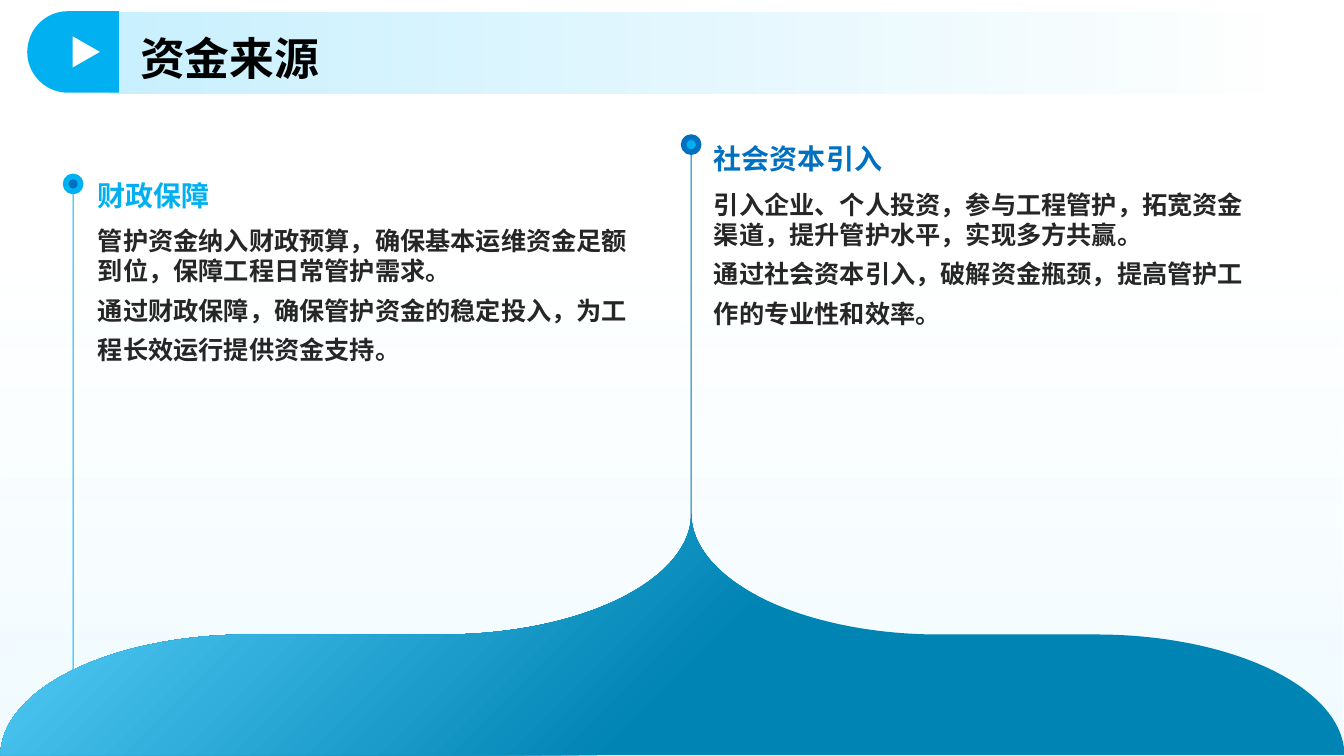
from lxml.etree import SubElement
from pptx import Presentation
from pptx.dml.color import RGBColor
from pptx.enum.shapes import MSO_SHAPE as Preset
from pptx.enum.text import MSO_ANCHOR as Anchor
from pptx.oxml.ns import qn
from pptx.util import Inches, Pt


def color(code):
    return RGBColor.from_string(code)


class FundingSlide:
    """Draws the elements of the funding slide in one shared style."""

    font = "Noto Sans CJK SC"
    sky, ocean, ink = "00B0F0", "0070C0", "262626"

    def __init__(self, slide):
        self.slide = slide

    def shape(self, preset, box, fill=None, rotation=0, adjust=(), ring=None):
        item = self.slide.shapes.add_shape(preset, *map(Inches, box))
        item.shadow.inherit = False
        item.rotation = rotation
        for index, value in enumerate(adjust):
            item.adjustments[index] = value
        if fill:
            item.fill.solid()
            item.fill.fore_color.rgb = color(fill)
        if ring:
            item.line.color.rgb = color(ring)
            item.line.width = Pt(4)
        else:
            item.line.fill.background()
        return item

    def gradient(self, item, stops, angle=0, radial=False):
        item.fill.gradient()
        item.fill.gradient_angle = angle
        for stop, (position, code, alpha) in zip(item.fill.gradient_stops, stops):
            stop.position = position
            stop.color.rgb = color(code)
        grad = item._element.spPr.find(qn("a:gradFill"))
        for tint, (_, _, alpha) in zip(grad.iter(qn("a:srgbClr")), stops):
            if alpha < 100:
                SubElement(tint, qn("a:alpha"), val=str(alpha * 1000))
        if radial:
            grad.remove(grad.find(qn("a:lin")))
            circle = SubElement(grad, qn("a:path"), path="circle")
            SubElement(circle, qn("a:fillToRect"), r="100000", b="100000")

    def text(self, box, words, size, code, spacings, anchor=Anchor.TOP):
        frame = self.slide.shapes.add_textbox(*map(Inches, box)).text_frame
        frame.word_wrap = True
        frame.vertical_anchor = anchor
        frame.margin_left = frame.margin_right = 0
        frame.margin_top = frame.margin_bottom = 0
        frame.text = words
        for paragraph, spacing in zip(frame.paragraphs, spacings):
            paragraph.line_spacing = spacing
            for run in paragraph.runs:
                run.font.size = Pt(size)
                run.font.bold = True
                run.font.name = self.font
                run.font.color.rgb = color(code)
                SubElement(run.font._element, qn("a:ea"), typeface=self.font)

    def pin(self, x, y, stem_top, stem_height, dot, accent):
        self.shape(Preset.RECTANGLE, (x, stem_top, 0.01, stem_height), accent)
        self.shape(Preset.OVAL, (x - 0.07, y, 0.15, 0.15), dot, ring=accent)

    def source(self, x, y, heading, details, accent):
        self.text((x, y, 5.48, 0.68), heading, 20, accent, [1.1], Anchor.BOTTOM)
        self.text((x, y + 0.82, 5.48, 3.6), details, 18, self.ink, [Pt(21.4), Pt(28.2)])

    def hill(self):
        brace = self.shape(Preset.LEFT_BRACE, (5.47, -0.37, 2.4, 13.33),
                           rotation=270, adjust=(1.025, 0.514))
        brace._element.spPr.find(qn("a:xfrm")).set("flipH", "1")
        self.gradient(brace, [(0, "5DD4FF", 100), (0.54, "0084B4", 100)], radial=True)

    def banner(self, title):
        ribbon = self.shape(Preset.ROUNDED_RECTANGLE, (1, 0.12, 11.6, 0.81))
        self.gradient(ribbon, [(0, "C9F1FF", 100), (1, "C9F1FF", 0)])
        self.text((1.39, 0.28, 8.51, 0.54), title, 32, "000000", [1.1], Anchor.MIDDLE)
        self.shape(Preset.ROUND_2_SAME_RECTANGLE, (0.32, 0.06, 0.81, 0.91),
                   self.sky, 270, (0.5, 0))
        self.shape(Preset.ISOSCELES_TRIANGLE, (0.7, 0.38, 0.31, 0.27), "FFFFFF", 90)


def main():
    deck = Presentation()
    deck.slide_width, deck.slide_height = Inches(13.33), Inches(7.5)
    page = FundingSlide(deck.slides.add_slide(deck.slide_layouts[6]))

    backdrop = page.shape(Preset.RECTANGLE, (0, 0, 13.33, 7.5))
    page.gradient(backdrop, [(0.35, "C9F1FF", 0), (1, "93E2FF", 15)], angle=270)
    page.pin(0.72, 1.75, 1.84, 4.88, page.ocean, page.sky)
    page.pin(6.85, 1.36, 1.4, 4.65, page.sky, page.ocean)
    page.hill()
    page.source(0.97, 1.42, "财政保障",
                "管护资金纳入财政预算，确保基本运维资金足额到位，保障工程日常管护需求。\n"
                "通过财政保障，确保管护资金的稳定投入，为工程长效运行提供资金支持。", page.sky)
    page.source(7.08, 1.06, "社会资本引入",
                "引入企业、个人投资，参与工程管护，拓宽资金渠道，提升管护水平，实现多方共赢。\n"
                "通过社会资本引入，破解资金瓶颈，提高管护工作的专业性和效率。", page.ocean)
    page.banner("资金来源")
    deck.save("out.pptx")


if __name__ == "__main__":
    main()
